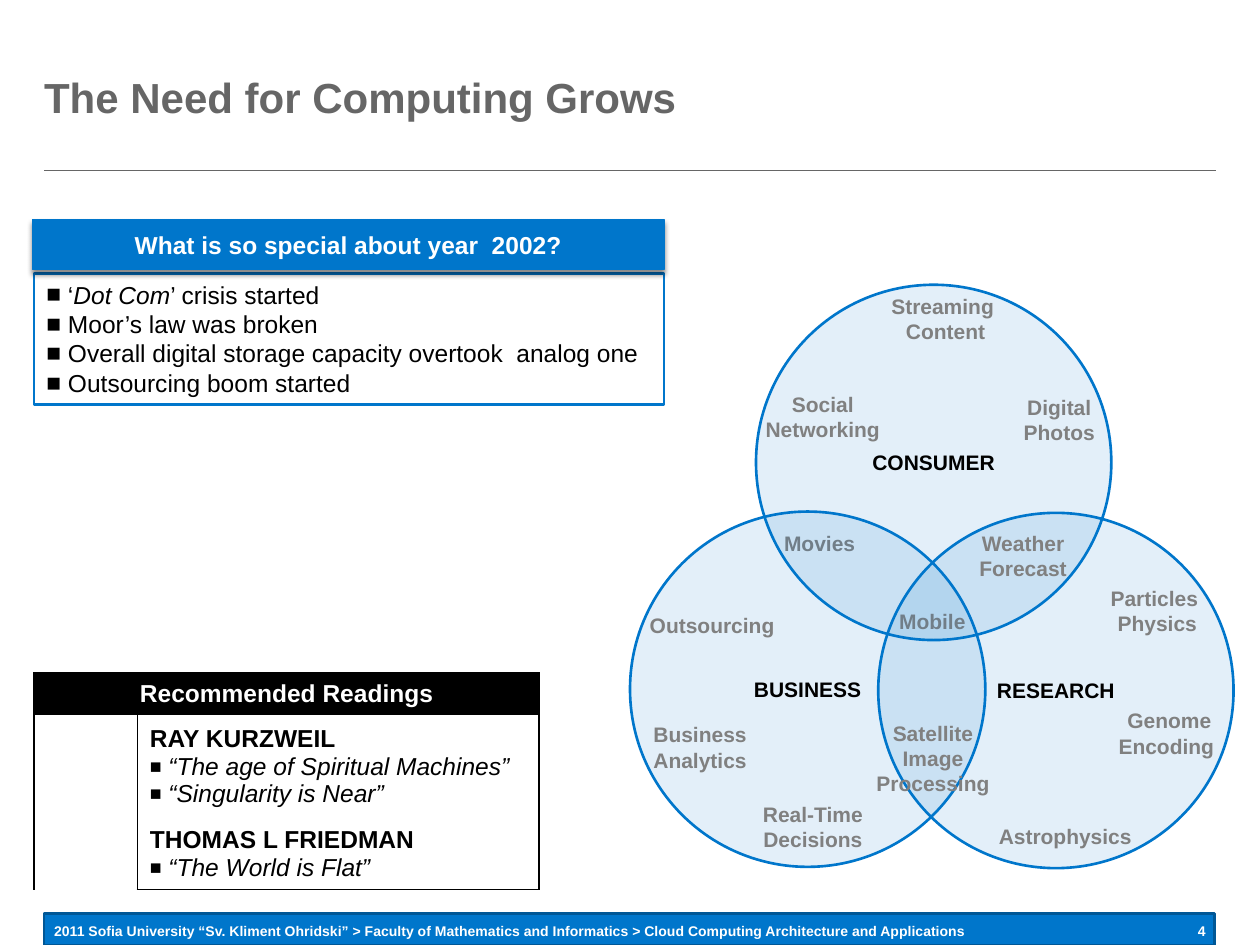
from dataclasses import dataclass

from lxml import etree
from pptx import Presentation
from pptx.dml.color import RGBColor
from pptx.enum.shapes import MSO_CONNECTOR, MSO_SHAPE
from pptx.enum.text import MSO_ANCHOR, PP_ALIGN
from pptx.oxml.ns import qn
from pptx.util import Inches, Pt

RECT, OVAL = MSO_SHAPE.RECTANGLE, MSO_SHAPE.OVAL
LINE = MSO_CONNECTOR.STRAIGHT
TOP, MID = MSO_ANCHOR.TOP, MSO_ANCHOR.MIDDLE
LEFT, MIDST, RIGHT = PP_ALIGN.LEFT, PP_ALIGN.CENTER, PP_ALIGN.RIGHT


@dataclass(frozen=True)
class Theme:
    """Colours, font and type sizes of the slide."""
    font: str = "Arial"
    blue: str = "0076CB"
    navy: str = "005796"
    dark: str = "666666"
    gray: str = "808080"
    black: str = "000000"
    white: str = "FFFFFF"
    head: int = 24
    body: int = 14
    label: int = 12
    foot: int = 8


def put(item, values):
    """Set each named value on the item."""
    for name, value in values.items():
        setattr(item, name, value)


def add(node, tag, **attrs):
    """Append a child element and return it."""
    return etree.SubElement(node, qn(tag), attrs)


class Page:
    """Holds the theme and the slide that is being drawn."""

    def __init__(self, slide, theme):
        """Keep the slide and its theme."""
        self.slide, self.theme = slide, theme
        self.shapes = slide.shapes

    def para(self, par, parts, size, color, bold=False, align=LEFT, bullet=None):
        """Fill a paragraph from (text, italic) parts; newlines break lines."""
        par.alignment = align
        if bullet:
            props = par._p.get_or_add_pPr()
            put_at = {"marL": "0", "indent": "0"}
            props.attrib.update(put_at)
            add(props, "a:buSzPct", val=f"{bullet}000")
            add(props, "a:buFont", typeface=self.theme.font)
            add(props, "a:buChar", char="■")
        for text, slant in parts:
            for row, line in enumerate(text.split("\n")):
                if row:
                    par.add_line_break()
                    add(par._p[-1], "a:rPr", sz=f"{size}00")
                run = par.add_run()
                run.text = line
                put(run.font, {"name": self.theme.font, "size": Pt(size),
                               "bold": bold, "italic": slant})
                run.font.color.rgb = RGBColor.from_string(color)

    def frame(self, shape, pads, anchor, wrap=True):
        """Set the insets, anchor and wrapping of a shape's text."""
        left, top, right, bottom = map(Inches, pads)
        put(shape.text_frame, {
            "margin_left": left, "margin_top": top, "margin_right": right,
            "margin_bottom": bottom, "vertical_anchor": anchor, "word_wrap": wrap})
        return shape.text_frame

    def text(self, box, words, size, color, align=LEFT, pads=(0, 0, 0, 0),
             anchor=TOP, wrap=False, home=None):
        """Add a bold text box."""
        shape = (home or self.shapes).add_textbox(*map(Inches, box))
        body = self.frame(shape, pads, anchor, wrap)
        self.para(body.paragraphs[0], [(words, False)], size, color, True, align)

    def shape(self, kind, box, fill, edge, width=1.5, alpha=None, home=None):
        """Add a flat preset shape."""
        shape = (home or self.shapes).add_shape(kind, *map(Inches, box))
        shape.shadow.inherit = False
        shape.fill.solid()
        shape.fill.fore_color.rgb = RGBColor.from_string(fill)
        if alpha:
            tint = shape._element.spPr.find(qn("a:solidFill"))[0]
            add(tint, "a:alpha", val=f"{alpha}000")
        shape.line.color.rgb = RGBColor.from_string(edge)
        shape.line.width = Pt(width)
        return shape

    def rule(self, start, end, color, width):
        """Add a straight line."""
        line = self.shapes.add_connector(LINE, *map(Inches, start + end))
        line.line.color.rgb = RGBColor.from_string(color)
        line.line.width = Pt(width)
        add(line._element.spPr, "a:effectLst")

    def cast(self, shape):
        """Give a shape a soft shadow below it."""
        glow = shape._element.spPr.find(qn("a:effectLst"))
        drop = add(glow, "a:outerShdw", blurRad=str(Pt(3)), dist=str(Pt(2.4)),
                   dir="5400000", rotWithShape="0")
        add(add(drop, "a:srgbClr", val=self.theme.black), "a:alpha", val="45000")

    def ring(self, spot, name, labels):
        """Add a named circle with its labels as one group."""
        look = self.theme
        home = self.shapes.add_group_shape().shapes
        disc = self.shape(OVAL, spot + (2.82, 2.82), look.blue, look.blue,
                          alpha=11, home=home)
        body = self.frame(disc, (0.1, 0.08, 0.1, 0.08), MID)
        self.para(body.paragraphs[0], [(name, False)], look.label, look.black,
                  True, MIDST)
        for words, left, top, width in labels:
            high = 0.3 + 0.2 * words.count("\n")
            self.text((left, top, width, high), words, look.label, look.gray,
                      MIDST, (0.1, 0.05, 0.1, 0.05), home=home)

    def cell(self, cell, fill, sides):
        """Fill a cell and draw only the given sides."""
        props = cell._tc.get_or_add_tcPr()
        for side in "LRTB":
            edge = add(props, f"a:ln{side}", w=str(Pt(1)))
            if side in sides:
                add(add(edge, "a:solidFill"), "a:srgbClr", val=self.theme.black)
            else:
                add(edge, "a:noFill")
        cell.fill.solid()
        cell.fill.fore_color.rgb = RGBColor.from_string(fill)
        cell.vertical_anchor = MID

    def table(self, box, cols, rows, title, books):
        """Add the reading list, one row for each author."""
        look = self.theme
        grid = self.shapes.add_table(len(rows), len(cols), *map(Inches, box)).table
        for col, width in zip(grid.columns, cols):
            col.width = Inches(width)
        for row, high in zip(grid.rows, rows):
            row.height = Inches(high)
        last = len(rows) - 1
        for r in range(len(rows)):
            for c in range(len(cols)):
                sides = "LR" + ("T" if r == 0 else "") + ("B" if r == last else "")
                self.cell(grid.cell(r, c), look.white if r else look.black, sides)
        grid.cell(0, 0).merge(grid.cell(0, 1))
        grid.cell(1, 0).merge(grid.cell(last, 0))
        self.para(grid.cell(0, 0).text_frame.paragraphs[0], [(title, False)],
                  look.body, look.white, True, MIDST)
        for r, (name, works) in enumerate(books, 1):
            body = grid.cell(r, 1).text_frame
            self.para(body.paragraphs[0], [(name, False)], look.body, look.black, True)
            for work in works:
                self.para(body.add_paragraph(), [(f" “{work}”", True)],
                          look.body, look.black, bullet=80)


def main():
    """Build the slide and save it."""
    deck = Presentation()
    put(deck, {"slide_width": Inches(10), "slide_height": Inches(7.5)})
    look = Theme()
    page = Page(deck.slides.add_slide(deck.slide_layouts[6]), look)

    page.rule((0.35, 1.35), (9.65, 1.35), look.dark, 0.5)
    page.shape(RECT, (0.35, 7.25, 9.29, 0.25), look.blue, look.navy)
    page.text((0.35, 7.32, 7.4, 0.13),
              "2011 Sofia University “Sv. Kliment Ohridski” > Faculty of Mathematics "
              "and Informatics > Cloud Computing Architecture and Applications",
              look.foot, look.white, pads=(0.08, 0, 0, 0))
    page.text((9.43, 7.32, 0.22, 0.13), "4", look.foot, look.white, RIGHT,
              (0, 0, 0.08, 0))
    page.text((0.35, 0.35, 9.29, 0.83), "The Need for Computing Grows",
              look.head, look.dark, anchor=MID, wrap=True)

    facts = [
        [(" ‘", False), ("Dot Com", True), ("’ crisis started", False)],
        [(" Moor’s law was broken", False)],
        [(" Overall digital storage capacity overtook  analog one", False)],
        [(" Outsourcing boom started", False)],
    ]
    panel = page.shape(RECT, (0.27, 2.17, 5, 1.04), look.white, look.blue)
    body = page.frame(panel, (0.1, 0.05, 0.1, 0.05), TOP)
    for i, fact in enumerate(facts):
        par = body.add_paragraph() if i else body.paragraphs[0]
        page.para(par, fact, look.body, look.black, bullet=100)

    bar = page.shape(RECT, (0.26, 1.74, 5.01, 0.4), look.blue, look.blue, 0.79)
    page.cast(bar)
    body = page.frame(bar, (0.1, 0.08, 0.1, 0.08), MID)
    page.para(body.paragraphs[0], [("What is so special about year  2002?", False)],
              look.body, look.white, True, MIDST)

    page.ring((6.97, 4.07), "RESEARCH", [
        ("Astrophysics", 7.82, 6.49, 1.27),
        ("Genome\nEncoding ", 8.77, 5.57, 1.02),
        ("Particles \nPhysics", 8.71, 4.6, 0.95)])
    page.table((0.27, 5.34, 4.01, 1.7), (0.82, 3.19), (0.33, 0.82, 0.55),
               "Recommended Readings", [
        ("RAY KURZWEIL", ["The age of Spiritual Machines", "Singularity is Near"]),
        ("THOMAS L FRIEDMAN", ["The World is Flat"])])
    page.ring((5, 4.06), "BUSINESS", [
        ("Outsourcing ", 5.05, 4.81, 1.25),
        ("Business \nAnalytics ", 5.08, 5.68, 1),
        ("Real-Time \nDecisions ", 5.95, 6.31, 1.05),
        ("Mobile", 7.03, 4.78, 0.74),
        ("Movies", 6.12, 4.16, 0.77),
        ("Satellite\nImage\nProcessing", 6.85, 5.67, 1.11)])
    page.ring((6, 2.26), "CONSUMER", [
        ("Digital \nPhotos ", 8.02, 3.08, 0.82),
        ("Streaming \nContent", 6.97, 2.28, 1.07),
        ("Social\nNetworking", 5.97, 3.06, 1.12),
        ("Weather\nForecast", 7.67, 4.16, 0.9)])
    deck.save("out.pptx")


if __name__ == "__main__":
    main()
